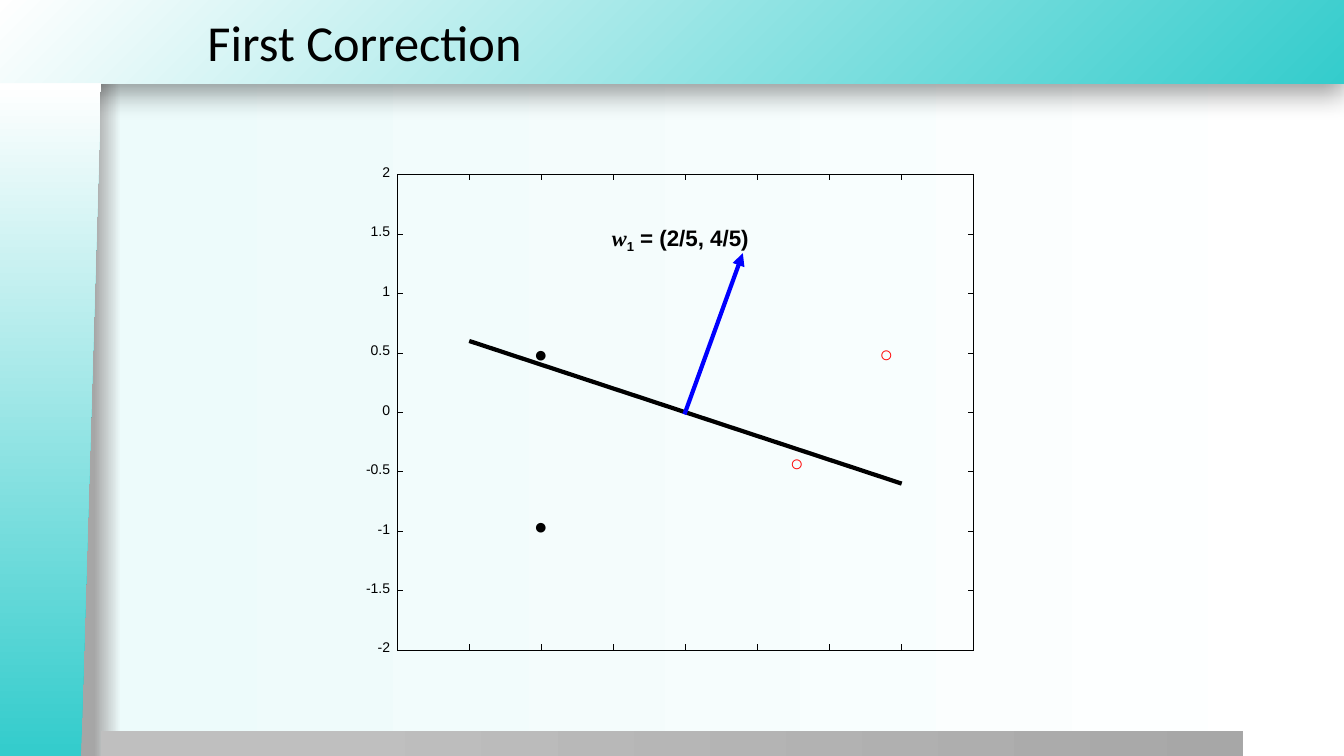
from lxml.etree import SubElement as Sub
from pptx import Presentation
from pptx.dml.color import RGBColor
from pptx.enum.shapes import MSO_CONNECTOR as Connector, MSO_SHAPE as Shape
from pptx.enum.text import MSO_ANCHOR as Anchor, MSO_AUTO_SIZE as AutoSize, PP_ALIGN as Align
from pptx.oxml.ns import qn
from pptx.util import Cm, Pt

COLORS = {"black": "000000", "white": "FFFFFF", "teal": "34CCCC", "mint": "EDFBFB",
          "shade": "A6A6A6", "silver": "BFBFBF", "gray": "A7A7A7",
          "blue": "0000FF", "red": "FF0000"}
PLOT_LEFT, PLOT_TOP, PLOT_WIDTH, PLOT_HEIGHT = 10.01, 4.4, 14.53, 11.98
PLOT_RIGHT, PLOT_BOTTOM = PLOT_LEFT + PLOT_WIDTH, PLOT_TOP + PLOT_HEIGHT
TICK = 0.14
TICK_VALUES = [n / 2 for n in range(-4, 5)]


def plot_x(value):
    return PLOT_LEFT + (value + 2) / 4 * PLOT_WIDTH


def plot_y(value):
    return PLOT_BOTTOM - (value + 2) / 4 * PLOT_HEIGHT


class SlidePainter:
    """Draws styled elements on one slide; all lengths are in centimetres."""

    def __init__(self, slide):
        self.slide = slide
        self.shapes = slide.shapes

    def color(self, name):
        return RGBColor.from_string(COLORS[name])

    def gradient(self, owner, fill, stops, corner=False):
        """Fill with (percent, colour) stops, left to right or out of the lower right corner."""
        fill.gradient()
        grad = next(owner.element.iter(qn("a:gradFill")))
        for child in list(grad):
            grad.remove(child)
        grad.set("rotWithShape", "1")
        stop_list = Sub(grad, qn("a:gsLst"))
        for percent, name in stops:
            stop = Sub(stop_list, qn("a:gs"), pos=str(percent * 1000))
            Sub(stop, qn("a:srgbClr"), val=COLORS[name])
        if corner:
            circle = Sub(grad, qn("a:path"), path="circle")
            Sub(circle, qn("a:fillToRect"), l="100000", t="100000")
        else:
            Sub(grad, qn("a:lin"), ang="0", scaled="0")

    def background(self, stops):
        self.gradient(self.slide, self.slide.background.fill, stops)

    def band(self, kind, left, top, width, height, stops, corner=False):
        band = self.shapes.add_shape(kind, Cm(left), Cm(top), Cm(width), Cm(height))
        band.shadow.inherit = False
        band.line.fill.background()
        self.gradient(band, band.fill, stops, corner)
        return band

    def drop_shadow(self, shape):
        effects = shape.element.spPr.find(qn("a:effectLst"))
        shadow = Sub(effects, qn("a:outerShdw"), blurRad=str(Pt(20)), dist=str(Pt(6)),
                     dir="5400000", algn="t", rotWithShape="0")
        tint = Sub(shadow, qn("a:srgbClr"), val=COLORS["black"])
        Sub(tint, qn("a:alpha"), val="40000")

    def frame(self, left, top, width, height):
        frame = self.shapes.add_shape(Shape.RECTANGLE, Cm(left), Cm(top), Cm(width), Cm(height))
        frame.shadow.inherit = False
        frame.fill.background()
        self.stroke(frame.line, "black", 0.5)

    def stroke(self, line, color, weight):
        line.color.rgb = self.color(color)
        line.width = Pt(weight)

    def line(self, x1, y1, x2, y2, color="black", weight=0.5, arrow=False):
        line = self.shapes.add_connector(Connector.STRAIGHT, Cm(x1), Cm(y1), Cm(x2), Cm(y2))
        self.stroke(line.line, color, weight)
        if arrow:
            Sub(line.line._get_or_add_ln(), qn("a:tailEnd"), type="triangle")
        Sub(line.element.spPr, qn("a:effectLst"))

    def polyline(self, points, color, weight):
        start, *rest = [(Cm(x), Cm(y)) for x, y in points]
        builder = self.shapes.build_freeform(*start)
        builder.add_line_segments(rest, close=False)
        curve = builder.convert_to_shape()
        curve.shadow.inherit = False
        curve.fill.background()
        self.stroke(curve.line, color, weight)

    def text(self, left, top, width, height, runs, size, color="black", font="Arial",
             align=Align.LEFT, padding=(0, 0), anchor=Anchor.TOP, wrap=False):
        """Add one paragraph; each run is its text and a dict of font, bold, italic, baseline."""
        box = self.shapes.add_textbox(Cm(left), Cm(top), Cm(width), Cm(height))
        frame = box.text_frame
        frame.word_wrap = wrap
        frame.auto_size = AutoSize.NONE
        frame.vertical_anchor = anchor
        frame.margin_left = frame.margin_right = Cm(padding[0])
        frame.margin_top = frame.margin_bottom = Cm(padding[1])
        paragraph = frame.paragraphs[0]
        paragraph.alignment = align
        for words, style in runs:
            run = paragraph.add_run()
            run.text = words
            run.font.name = style.get("font", font)
            run.font.size = Pt(size)
            run.font.color.rgb = self.color(color)
            run.font.bold = style.get("bold", False)
            run.font.italic = style.get("italic", False)
            if "baseline" in style:
                run.font._element.set("baseline", str(style["baseline"] * 1000))


def draw_theme(painter):
    painter.background([(7, "shade"), (9, "mint"), (100, "white")])
    fade = [(0, "teal"), (100, "white")]
    header = painter.band(Shape.RECTANGLE, -0.02, 0, 33.89, 2.11, fade, corner=True)
    painter.drop_shadow(header)
    painter.band(Shape.RECTANGLE, 2.54, 18.42, 28.78, 0.65, [(20, "silver"), (100, "gray")])
    sidebar = painter.band(Shape.FLOWCHART_MANUAL_INPUT, -7.21, 9.32, 16.97, 2.54,
                           [(1, "teal"), (100, "white")])
    sidebar.rotation = 270
    sidebar.element.spPr.xfrm.set("flipV", "1")


def draw_axes(painter):
    painter.frame(PLOT_LEFT, PLOT_TOP, PLOT_WIDTH, PLOT_HEIGHT)
    for value in TICK_VALUES:
        x, y = plot_x(value), plot_y(value)
        painter.line(x, PLOT_BOTTOM, x, PLOT_BOTTOM - TICK)
        painter.line(x, PLOT_TOP, x, PLOT_TOP + TICK)
        painter.line(PLOT_LEFT, y, PLOT_LEFT + TICK, y)
        painter.line(PLOT_RIGHT, y, PLOT_RIGHT - TICK, y)
        painter.text(8.8, y - 0.28, 1.03, 0.43, [(f"{value:g}", {})], 10,
                     align=Align.RIGHT, wrap=True)


def draw_classifier(painter):
    boundary = [(n / 10, -0.4 * n / 10) for n in range(-15, 16)]
    painter.polyline([(plot_x(x), plot_y(y)) for x, y in boundary], "black", 3)
    painter.line(17.25, 10.44, 18.72, 6.38, "blue", 3, arrow=True)
    bold = {"bold": True}
    painter.text(15.42, 5.64, 3.68, 0.69,
                 [("w", {"font": "Times New Roman", "bold": True, "italic": True}),
                  ("1", {"bold": True, "baseline": -25}),
                  (" = (2/5, 4/5)", bold)], 16)
    samples = [("●", "black", 13.21, 8.43), ("●", "black", 13.21, 12.78),
               ("○", "red", 19.66, 11.2), ("○", "red", 21.92, 8.43)]
    for marker, color, left, top in samples:
        painter.text(left, top, 1.09, 0.94, [(marker, {})], 16, color, "Times New Roman",
                     padding=(0.25, 0.13))


def main():
    deck = Presentation()
    deck.slide_width, deck.slide_height = Cm(33.87), Cm(19.05)
    painter = SlidePainter(deck.slides.add_slide(deck.slide_layouts[6]))
    draw_theme(painter)
    draw_axes(painter)
    draw_classifier(painter)
    painter.text(4.98, 0, 28.89, 2.11, [("First Correction", {})], 36, font="Calibri",
                 padding=(0.25, 0.13), anchor=Anchor.MIDDLE, wrap=True)
    deck.save("out.pptx")


if __name__ == "__main__":
    main()
